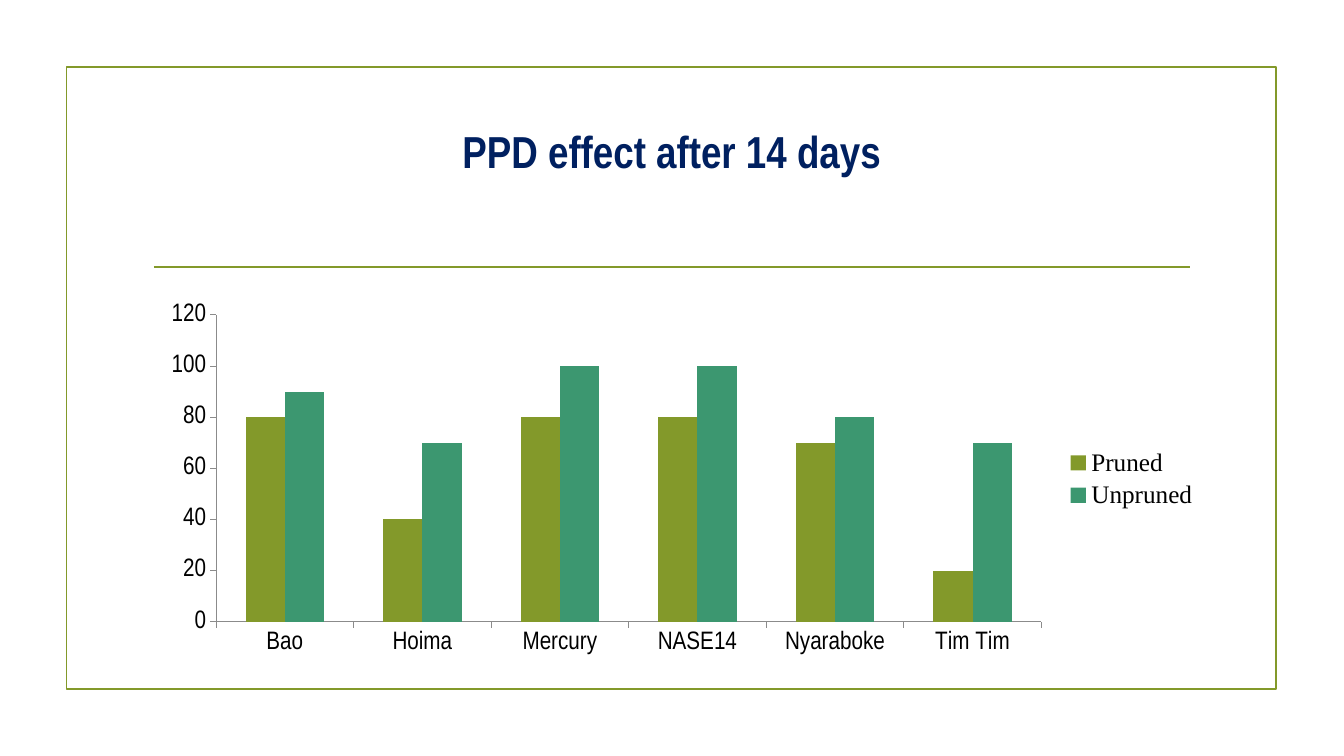
from lxml import etree
from pptx import Presentation
from pptx.chart.data import CategoryChartData
from pptx.dml.color import RGBColor
from pptx.enum import chart as ch, shapes, text
from pptx.oxml.ns import qn
from pptx.util import Pt

COLORS = {"olive": "83992A", "green": "3C9770", "navy": "002060",
          "black": "000000", "axis": "8B8B8B"}


def rgb(name):
    return RGBColor.from_string(COLORS[name])


def set_font(font, **values):
    font.color.rgb = rgb(values.pop("color"))
    for key, value in values.items():
        setattr(font, key, value)


prs = Presentation()
prs.slide_width, prs.slide_height = Pt(960), Pt(540)
s = prs.slides.add_slide(prs.slide_layouts[6])

# Frame
frame = s.shapes.add_shape(shapes.MSO_SHAPE.RECTANGLE,
                           Pt(47.5), Pt(48), Pt(864), Pt(444))
frame.shadow.inherit = False
frame.fill.background()

# Rule under the title
rule = s.shapes.add_connector(shapes.MSO_CONNECTOR.STRAIGHT,
                              Pt(110), Pt(190.5), Pt(850), Pt(190.5))
etree.SubElement(rule._element.spPr, qn("a:effectLst"))
for sp in (frame, rule):
    sp.line.color.rgb = rgb("olive")
    sp.line.width = Pt(1.25)

# Title
title = s.shapes.add_textbox(Pt(102), Pt(77), Pt(756), Pt(61))
tf = title.text_frame
tf.word_wrap = True
tf.vertical_anchor = text.MSO_ANCHOR.MIDDLE
p = tf.paragraphs[0]
p.alignment = text.PP_ALIGN.CENTER
r = p.add_run()
r.text = "PPD effect after 14 days"
set_font(r.font, name="Arial Narrow", size=Pt(32), bold=True, color="navy")

# Chart
data = CategoryChartData()
data.categories = ["Bao", "Hoima", "Mercury", "NASE14", "Nyaraboke", "Tim Tim"]
data.add_series("Pruned", (80, 40, 80, 80, 70, 20))
data.add_series("Unpruned", (90, 70, 100, 100, 80, 70))
chart = s.shapes.add_chart(ch.XL_CHART_TYPE.COLUMN_CLUSTERED, Pt(107.5), Pt(211.5),
                           Pt(756), Pt(261.5), data).chart
chart.has_title = False
set_font(chart.font, name="Times New Roman", size=Pt(10), color="black")

# Columns
plot = chart.plots[0]
plot.vary_by_categories = False
plot.gap_width, plot.overlap = 150, 0
for series, color in zip(plot.series, ("olive", "green")):
    series.format.fill.solid()
    series.format.fill.fore_color.rgb = rgb(color)

# Axes
for axis in (chart.category_axis, chart.value_axis):
    axis.has_major_gridlines = False
    axis.major_tick_mark = ch.XL_TICK_MARK.OUTSIDE
    axis.minor_tick_mark = ch.XL_TICK_MARK.NONE
    axis.format.line.color.rgb = rgb("axis")
    axis.format.line.width = Pt(0.75)
    set_font(axis.tick_labels.font, name="Arial Narrow", size=Pt(18), color="black")
scale = {"minimum_scale": 0, "maximum_scale": 120, "major_unit": 20}
for key, value in scale.items():
    setattr(chart.value_axis, key, value)

# Legend
chart.has_legend = True
chart.legend.position = ch.XL_LEGEND_POSITION.RIGHT
chart.legend.include_in_layout = False
set_font(chart.legend.font, name="Times New Roman", size=Pt(18), color="black")

prs.save("out.pptx")
